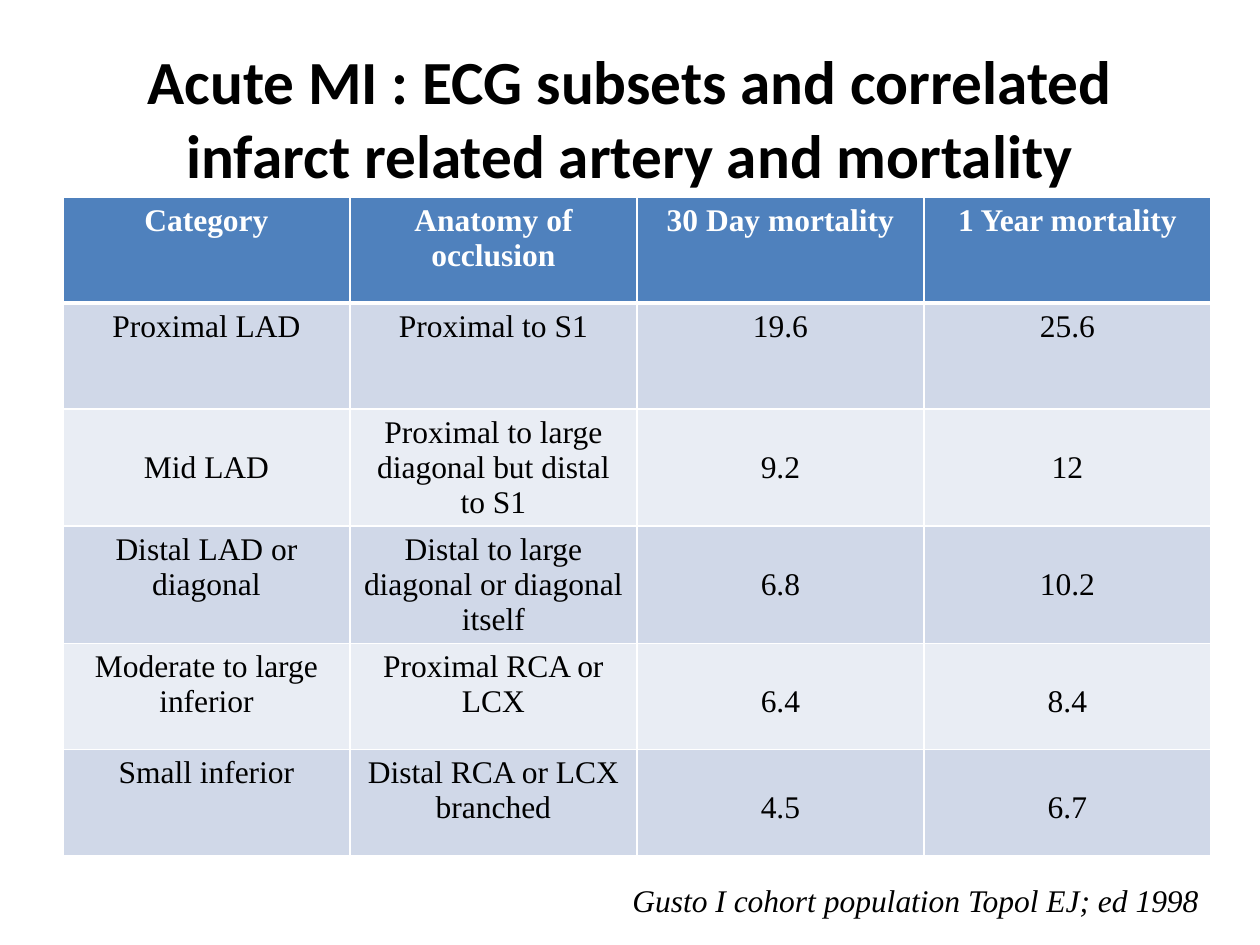
import pptx
import pptx.util
import pptx.dml.color
import pptx.enum.text
import pptx.oxml
import pptx.oxml.ns

PX = 914400 / 126
HUES = {"ink": "000000", "white": "FFFFFF", "head": "4F81BD",
        "odd": "D0D8E8", "even": "E9EDF4"}
SERIF = "Times New Roman"
ALIGN = pptx.enum.text.PP_ALIGN
ANCHOR = pptx.enum.text.MSO_ANCHOR
ROWS = [
    ("Category", "Anatomy of occlusion", "30 Day mortality", "1 Year mortality"),
    ("Proximal LAD", "Proximal to S1", "19.6", "25.6"),
    ("Mid LAD", "Proximal to large diagonal but distal to S1", "9.2", "12"),
    ("Distal LAD or diagonal", "Distal to large diagonal or diagonal itself", "6.8", "10.2"),
    ("Moderate to large inferior", "Proximal RCA or LCX", "6.4", "8.4"),
    ("Small inferior", "Distal RCA or LCX branched", "4.5", "6.7"),
]
LOW = {(2, 0)} | {(row, col) for row in range(2, 6) for col in (2, 3)}


def emu(px):
    return pptx.util.Emu(round(px * PX))


def color(name):
    return pptx.dml.color.RGBColor.from_string(HUES[name])


def write(frame, text, size, face, hue="ink", bold=False, slant=False, align=ALIGN.CENTER):
    para = frame.paragraphs[0]
    para.alignment = align
    run = para.add_run()
    run.text = text
    font = run.font
    font.size = pptx.util.Pt(size)
    font.name = face
    font.bold = bold
    font.italic = slant
    font.color.rgb = color(hue)


def place(shape, left, top, width, height):
    shape.left, shape.top = emu(left), emu(top)
    shape.width, shape.height = emu(width), emu(height)


def border(cell, side, points):
    props = cell._tc.get_or_add_tcPr()
    props.append(pptx.oxml.parse_xml(
        f'<a:ln{side} {pptx.oxml.ns.nsdecls("a")} w="{points * 12700}">'
        f'<a:solidFill><a:srgbClr val="{HUES["white"]}"/></a:solidFill></a:ln{side}>'))


def add_title(slide, text):
    title = slide.shapes.title
    place(title, 63, 38, 1134, 158)
    frame = title.text_frame
    frame.word_wrap = True
    frame.vertical_anchor = ANCHOR.MIDDLE
    write(frame, text, 35, "Calibri", bold=True)


def fill_cell(cell, text, row, col):
    head = row == 0
    thick = {(0, "B"), (1, "T")}
    for side in "LRTB":
        border(cell, side, 3 if (row, side) in thick else 1)
    cell.fill.solid()
    cell.fill.fore_color.rgb = color("head" if head else "odd" if row % 2 else "even")
    if (row, col) in LOW:
        cell.margin_top = emu(41)
    write(cell.text_frame, text, 18, SERIF, "white" if head else "ink", bold=head)


def add_grid(slide):
    wide, high = 287, 106
    count = len(ROWS[0])
    table = slide.shapes.add_table(len(ROWS), count, emu(63), emu(197),
                                   emu(wide * count), emu(high * len(ROWS))).table
    for col in table.columns:
        col.width = emu(wide)
    for row, texts in enumerate(ROWS):
        table.rows[row].height = emu(high)
        for col, text in enumerate(texts):
            fill_cell(table.cell(row, col), text, row, col)


def add_credit(slide, text):
    frame = slide.shapes.add_textbox(emu(620), emu(875), emu(597), emu(50)).text_frame
    frame.word_wrap = False
    frame.auto_size = pptx.enum.text.MSO_AUTO_SIZE.SHAPE_TO_FIT_TEXT
    write(frame, text, 18, SERIF, slant=True, align=ALIGN.LEFT)


def main():
    deck = pptx.Presentation()
    deck.slide_width, deck.slide_height = emu(1260), emu(945)
    slide = deck.slides.add_slide(deck.slide_layouts[5])
    add_title(slide, "Acute MI : ECG subsets and correlated infarct related artery and mortality")
    add_grid(slide)
    add_credit(slide, "Gusto I cohort population Topol EJ; ed 1998")
    deck.save("out.pptx")


if __name__ == "__main__":
    main()
